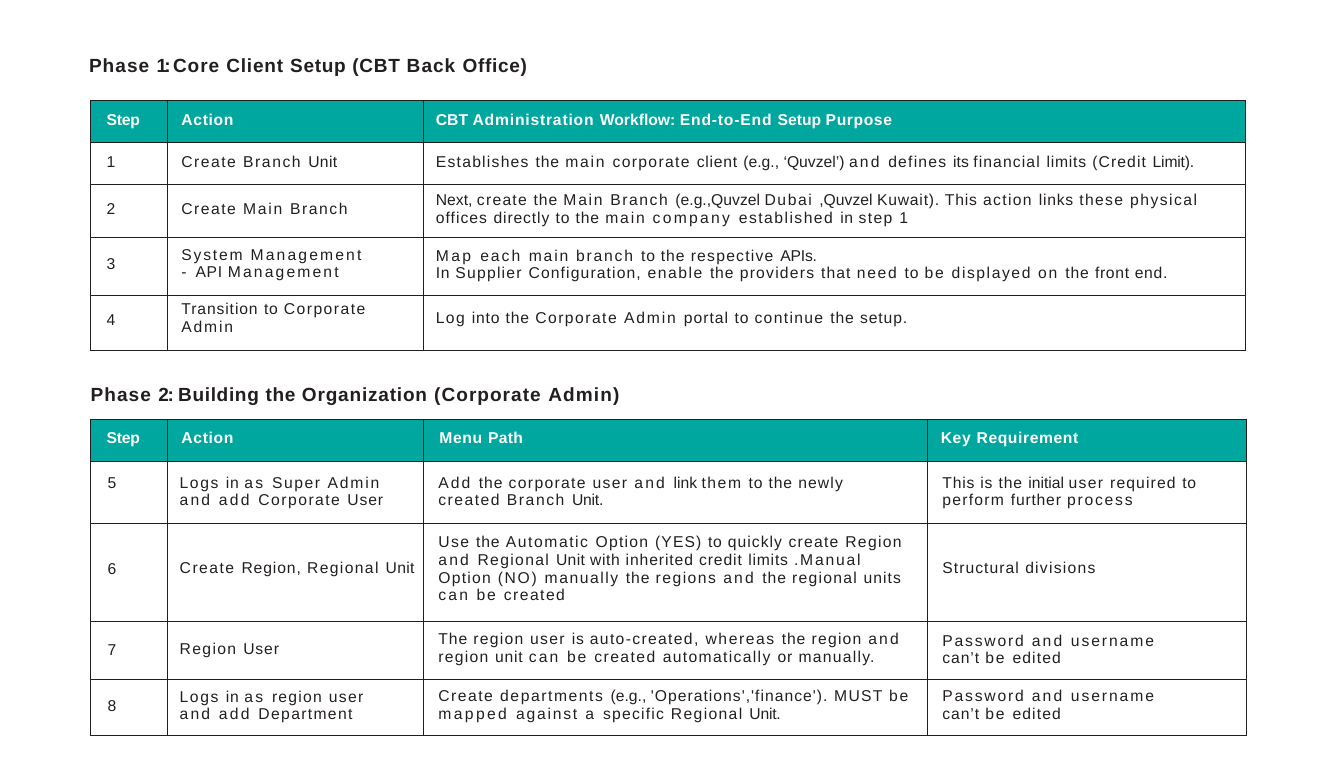
from dataclasses import dataclass

from lxml import etree
from pptx import Presentation
from pptx import util as u
from pptx.dml.color import RGBColor
from pptx.oxml.ns import qn

PX = 9525  # EMU per px at 96 px to the inch
FONT, INK, WHITE, TEAL = "Arial", "231F20", "FFFFFF", "00A79E"
HEADER_TOP = 12


@dataclass(frozen=True)
class Tracking:
    """Letter spacing in points: words listed by spacing, the rest at default."""
    default: float
    words: dict[float, str]

    def of(self, word: str) -> float:
        return next((spacing for spacing, listed in self.words.items()
                     if word in listed.split()), self.default)


@dataclass(frozen=True)
class Row:
    height: int
    tops: tuple[int, ...]
    cells: tuple[str, ...]


@dataclass(frozen=True)
class Phase:
    title: str
    title_box: tuple[int, int, int, int]
    table_top: int
    widths: tuple[int, ...]
    header_indents: tuple[int, ...]
    body_indents: tuple[int, ...]
    header: tuple[str, ...]
    steps: tuple[Row, ...]


TITLE_TRACKING = Tracking(0.6, {
    -2.6: "1:", -1.1: "2:", 0.5: "the", 0.7: "Client Organization",
    0.8: "Core", 0.9: "Phase Back (Corporate", 1.0: "Admin)"})
HEADER_TRACKING = Tracking(0.6, {
    -0.2: "Step", 0.0: "CBT Workflow: Setup", 0.3: "Path",
    0.5: "Purpose Requirement", 0.7: "Administration End-to-End"})
BODY_TRACKING = Tracking(1.2, {
    -2.3: ".", -0.2: "Unit. Limit). APIs.",
    0.0: "(e.g., ‘Quvzel’) (e.g.,Quvzel ,Quvzel Next, its link initial",
    0.3: "Unit", 0.5: "in", 0.6: "In API with front end.",
    0.7: "to client limits Kuwait). This links into is further unit",
    0.8: "the The Transition directly User Region, inherited credit or can’t setup.",
    0.9: "offices that portal quickly units Structural 'Operations','finance').",
    1.0: "financial (Credit Configuration, newly required (YES) edited",
    1.1: "Establishes defines create respective Supplier providers perform "
         "Option regional region MUST specific divisions manually.",
    1.3: "Create physical established Corporate created regions",
    1.4: "Branch Dubai enable displayed Logs Super them Automatic "
         "manually whereas departments",
    1.5: "Main need (NO)",
    1.6: "main branch System be on Admin process Manual Password against",
    1.7: "username", 1.8: "each Add", 1.9: "and Management can",
    2.0: "company - as add a", 2.1: "Map mapped"})

LOCKED = "Password and username\vcan’t be edited"

# In the texts \v is a line break and \n a new paragraph.
PHASES = (
    Phase(
        "Phase 1: Core Client Setup (CBT Back Office)", (105, 63, 539, 29),
        120, (91, 305, 979), (19, 17, 15), (19, 17, 15),
        ("Step", "Action",
         "CBT Administration Workflow: End-to-End Setup Purpose"),
        (
            Row(50, (12, 12, 12), (
                "1", "Create Branch Unit",
                "Establishes the main corporate client (e.g., ‘Quvzel’) and "
                "defines its financial limits (Credit Limit).")),
            Row(63, (18, 18, 8), (
                "2", "Create Main Branch",
                "Next, create the Main Branch (e.g.,Quvzel Dubai ,Quvzel Kuwait). "
                "This action links these physical\v"
                "offices directly to the main company established in step 1")),
            Row(69, (21, 10, 11), (
                "3", "System Management\v- API Management",
                "Map each main branch to the respective APIs.\n"
                "In Supplier Configuration, enable the providers that need "
                "to be displayed on the front end.")),
            Row(65, (18, 6, 16), (
                "4", "Transition to Corporate\vAdmin",
                "Log into the Corporate Admin portal to continue the setup.")),
        )),
    Phase(
        "Phase 2: Building the Organization (Corporate Admin)", (107, 454, 664, 29),
        499, (91, 305, 600, 380), (19, 17, 19, 16), (20, 15, 18, 18),
        ("Step", "Action", "Menu Path", "Key Requirement"),
        (
            Row(74, (16, 15, 15, 15), (
                "5", "Logs in as Super Admin\vand add Corporate User",
                "Add the corporate user and link them to the newly\v"
                "created Branch Unit.",
                "This is the initial user required to\vperform further process")),
            Row(117, (44, 43, 12, 43), (
                "6", "Create Region, Regional Unit",
                "Use the Automatic Option (YES) to quickly create Region\v"
                "and Regional Unit with inherited credit limits . Manual\n"
                "Option (NO) manually the regions and the regional units\v"
                "can be created",
                "Structural divisions")),
            Row(69, (23, 22, 10, 12), (
                "7", "Region User",
                "The region user is auto-created, whereas the region and\v"
                "region unit can be created automatically or manually.",
                LOCKED)),
            Row(66, (21, 10, 9, 9), (
                "8", "Logs in as region user\vand add Department",
                "Create departments (e.g., 'Operations','finance'). MUST be\v"
                "mapped against a specific Regional Unit.",
                LOCKED)),
        )),
)


def px(length: int) -> u.Emu:
    return u.Emu(length * PX)


def rgb(color: str) -> RGBColor:
    return RGBColor.from_string(color)


def write_text(frame, content: str, *, tracking: Tracking, size: int = 14,
               color: str = INK, bold: bool = False) -> None:
    """Write one run per word, each with its own letter spacing."""
    for index, block in enumerate(content.split("\n")):
        paragraph = frame.add_paragraph() if index else frame.paragraphs[0]
        for line_index, line in enumerate(block.split("\v")):
            if line_index:
                paragraph.add_line_break()
            words = line.split()
            for position, word in enumerate(words, 1):
                run = paragraph.add_run()
                run.text = word if position == len(words) else word + " "
                run.font.name, run.font.size = FONT, u.Pt(size)
                run.font.bold, run.font.color.rgb = bold, rgb(color)
                spacing = round(tracking.of(word) * 100)
                run._r.get_or_add_rPr().set("spc", str(spacing))


def set_insets(holder, left: int, top: int) -> None:
    holder.margin_left, holder.margin_top = px(left), px(top)
    holder.margin_right = holder.margin_bottom = 0


def add_borders(cell) -> None:
    properties = cell._tc.get_or_add_tcPr()
    for side in ("lnL", "lnR", "lnT", "lnB"):
        line = etree.SubElement(properties, qn(f"a:{side}"), w=str(u.Pt(1)))
        fill = etree.SubElement(line, qn("a:solidFill"))
        etree.SubElement(fill, qn("a:srgbClr"), val=INK)


def draw_phase(slide, phase: Phase) -> None:
    title = slide.shapes.add_textbox(*map(px, phase.title_box)).text_frame
    title.word_wrap = True
    set_insets(title, 1, 1)
    write_text(title, phase.title, tracking=TITLE_TRACKING, size=17, bold=True)

    header = Row(50, (HEADER_TOP,) * len(phase.widths), phase.header)
    rows = (header, *phase.steps)
    table = slide.shapes.add_table(
        len(rows), len(phase.widths), px(108), px(phase.table_top),
        px(sum(phase.widths)), px(sum(row.height for row in rows))).table
    table.horz_banding = False
    for column, width in zip(table.columns, phase.widths):
        column.width = px(width)
    for row_index, row in enumerate(rows):
        table.rows[row_index].height = px(row.height)
        is_header = row is header
        indents = phase.header_indents if is_header else phase.body_indents
        for column_index, content in enumerate(row.cells):
            cell = table.cell(row_index, column_index)
            set_insets(cell, indents[column_index], row.tops[column_index])
            add_borders(cell)
            cell.fill.solid()
            cell.fill.fore_color.rgb = rgb(TEAL if is_header else WHITE)
            write_text(cell.text_frame, content, bold=is_header,
                       color=WHITE if is_header else INK,
                       tracking=HEADER_TRACKING if is_header else BODY_TRACKING)


def main() -> None:
    deck = Presentation()
    deck.slide_width, deck.slide_height = px(1600), px(933)
    slide = deck.slides.add_slide(deck.slide_layouts[6])
    for phase in PHASES:
        draw_phase(slide, phase)
    deck.save("out.pptx")


if __name__ == "__main__":
    main()
